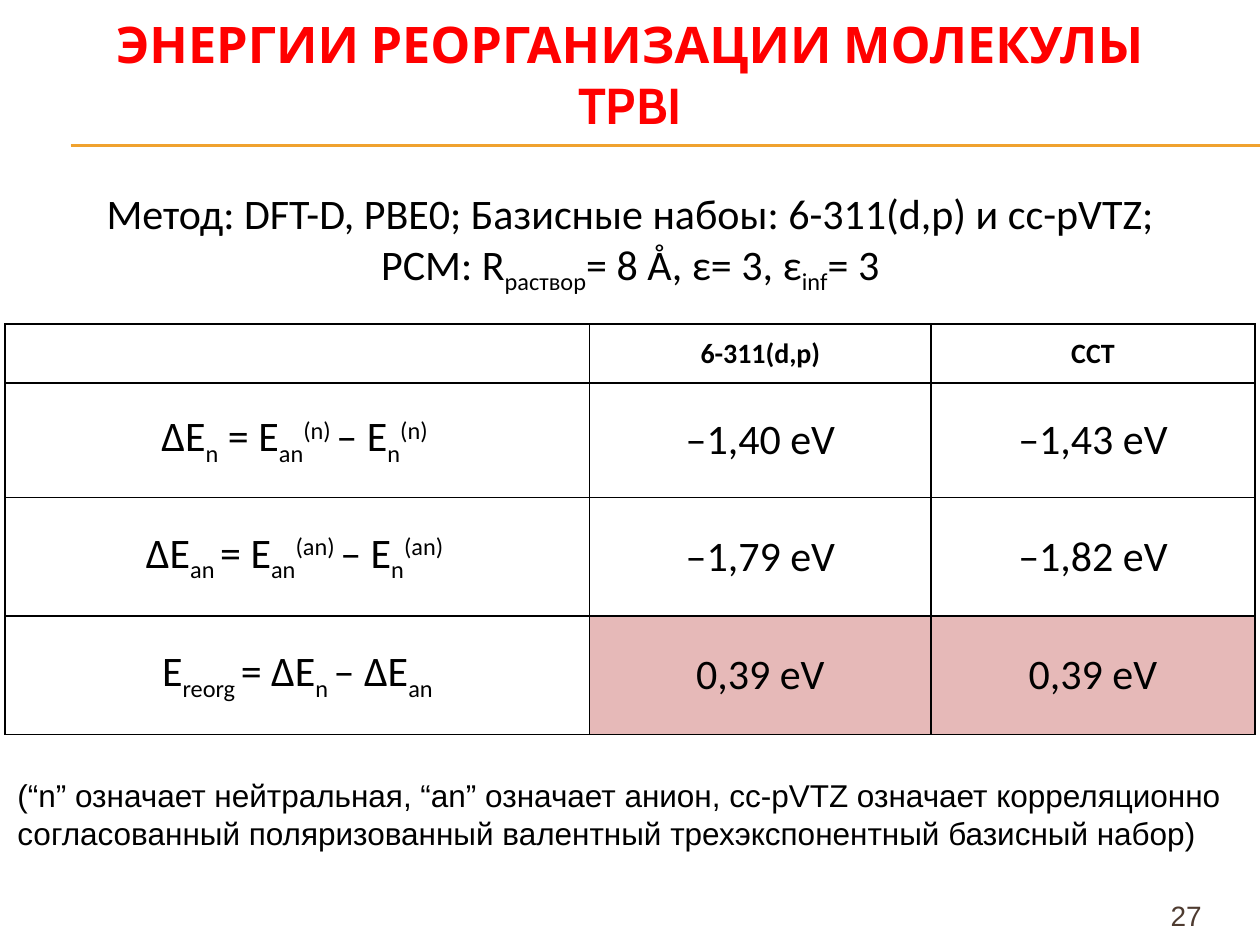
from lxml.etree import SubElement
from pptx import Presentation
from pptx.dml.color import RGBColor
from pptx.enum.shapes import MSO_CONNECTOR
from pptx.enum.text import MSO_ANCHOR, PP_ALIGN
from pptx.oxml.ns import qn
from pptx.util import Inches, Pt

COLORS = {
    "title": "FF0000",
    "text": "000000",
    "rule": "F0A22E",
    "number": "4E3B30",
    "result": "E6B9B8",
}
SUB, SUP = -25000, 30000

METHOD = [
    ["Метод: DFT-D, PBE0; Базисные набоы: 6-311(d,p) и cc-pVTZ; "],
    ["PCM: R", ("раствор", SUB), "= 8 Å, ε= 3, ε", ("inf", SUB), "= 3 "],
]
ENERGIES = [
    [[], ["6-311(d,p)"], ["CCT"]],
    [
        ["ΔE", ("n", SUB), " = E", ("an", SUB), ("(n) ", SUP),
         "– E", ("n", SUB), ("(n) ", SUP)],
        ["–1,40 eV"],
        ["–1,43 eV"],
    ],
    [
        ["ΔE", ("an ", SUB), "= E", ("an", SUB), ("(an) ", SUP),
         "– E", ("n", SUB), ("(an) ", SUP)],
        ["–1,79 eV"],
        ["–1,82 eV"],
    ],
    [
        ["E", ("reorg ", SUB), "= ΔE", ("n ", SUB), "– ΔE", ("an", SUB)],
        ["0,39 eV"],
        ["0,39 eV"],
    ],
]
NOTE = (
    "(“n” означает нейтральная, “an” означает анион, cc-pVTZ означает "
    "корреляционно согласованный поляризованный валентный "
    "трехэкспонентный базисный набор)"
)


def rgb(name):
    return RGBColor.from_string(COLORS[name])


def write(p, parts, size, font="Calibri", color="text", bold=False,
          align=PP_ALIGN.CENTER):
    p.alignment = align
    p.font.size = Pt(size)
    p.font.name = font
    p.font.bold = bold
    p.font.color.rgb = rgb(color)
    for part in parts:
        text, baseline = (part, 0) if isinstance(part, str) else part
        r = p.add_run()
        r.text = text
        if baseline:
            r.font._element.set("baseline", str(baseline))


def add_text(s, box, lines, size, anchor=MSO_ANCHOR.TOP, **style):
    tf = s.shapes.add_textbox(*map(Inches, box)).text_frame
    tf.word_wrap = True
    tf.vertical_anchor = anchor
    for i, parts in enumerate(lines):
        p = tf.add_paragraph() if i else tf.paragraphs[0]
        write(p, parts, size, **style)


def add_rules(s, left, top, width, gap):
    for y in (top, top + gap):
        line = s.shapes.add_connector(
            MSO_CONNECTOR.STRAIGHT,
            Inches(left), Inches(y), Inches(left + width), Inches(y))
        line.line.color.rgb = rgb("rule")
        line.line.width = Pt(0.75)
        SubElement(line._element.spPr, qn("a:effectLst"))


def add_borders(cell):
    tcPr = cell._tc.get_or_add_tcPr()
    for side in ("lnL", "lnR", "lnT", "lnB"):
        ln = SubElement(tcPr, qn(f"a:{side}"), w=str(Pt(1)))
        fill = SubElement(ln, qn("a:solidFill"))
        SubElement(fill, qn("a:srgbClr"), val=COLORS["text"])


def add_energy_table(s, box):
    table = s.shapes.add_table(4, 3, *map(Inches, box)).table
    table.first_row = False
    table.horz_banding = False
    for column, width in zip(table.columns, (4.64, 2.71, 2.57)):
        column.width = Inches(width)
    for row, height in zip(table.rows, (0.47, 0.91, 0.94, 0.94)):
        row.height = Inches(height)
    for i, row in enumerate(ENERGIES):
        for j, parts in enumerate(row):
            cell = table.cell(i, j)
            cell.margin_left = cell.margin_right = Inches(0.07)
            cell.margin_top = cell.margin_bottom = 0
            cell.vertical_anchor = MSO_ANCHOR.MIDDLE
            add_borders(cell)
            if i == 3 and j > 0:
                cell.fill.solid()
                cell.fill.fore_color.rgb = rgb("result")
            else:
                cell.fill.background()
            header = i == 0
            write(cell.text_frame.paragraphs[0], parts,
                  16 if header else 24, bold=header)


def main():
    prs = Presentation()
    prs.slide_width = Inches(10)
    prs.slide_height = Inches(7.5)
    s = prs.slides.add_slide(prs.slide_layouts[6])
    add_rules(s, 0.56, 1.15, 9.44, 0.01)
    add_text(s, (0.5, 0.3, 9, 0.57), [["ЭНЕРГИИ РЕОРГАНИЗАЦИИ МОЛЕКУЛЫ TPBI"]],
             28.8, anchor=MSO_ANCHOR.MIDDLE, font="Cabin", color="title",
             bold=True)
    add_energy_table(s, (0.04, 2.57, 9.92, 3.26))
    add_text(s, (0.04, 1.44, 10, 0.91), METHOD, 24)
    add_text(s, (9, 7.08, 0.83, 0.27), [["27"]], 16, font="Arial",
             color="number")
    add_text(s, (0.04, 6.11, 9.92, 0.71), [[NOTE]], 18, font="Arial",
             align=PP_ALIGN.LEFT)
    prs.save("out.pptx")


if __name__ == "__main__":
    main()
